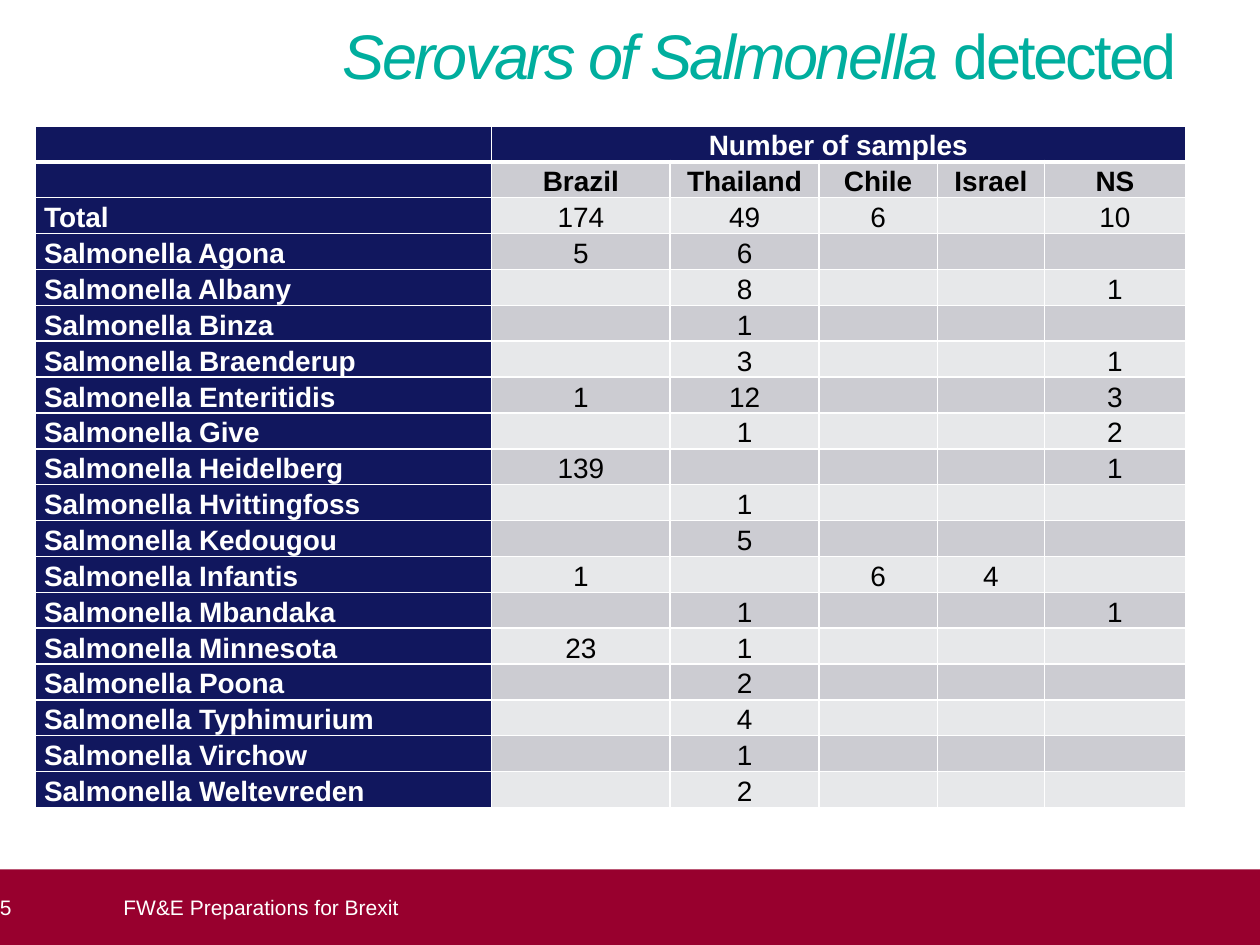
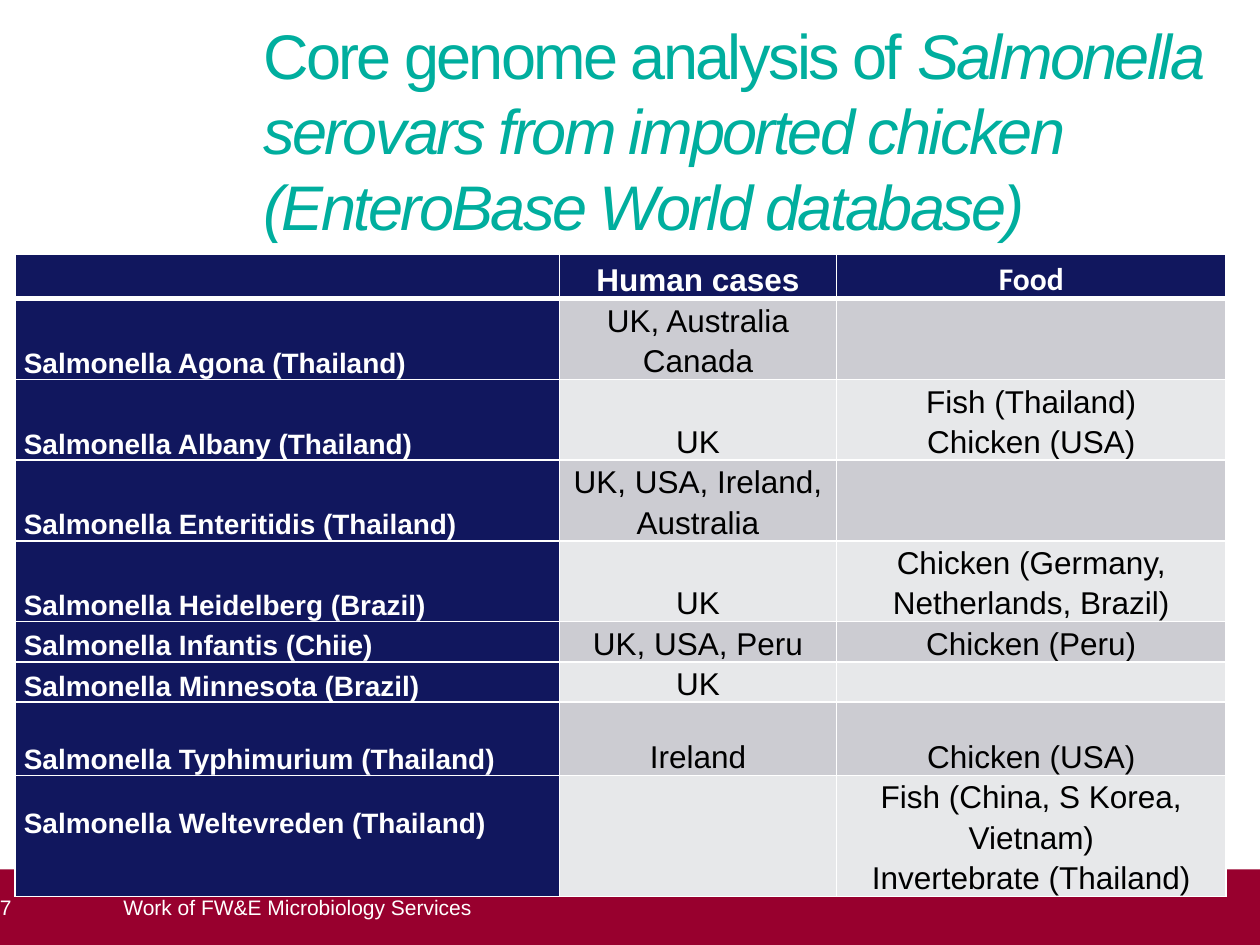
from lxml.etree import SubElement
from pptx import Presentation
from pptx.dml.color import RGBColor
from pptx.enum.shapes import MSO_SHAPE
from pptx.enum.text import MSO_ANCHOR, PP_ALIGN
from pptx.oxml.ns import qn
from pptx.util import Inches, Pt

TEAL = RGBColor(0x00, 0xAE, 0x9E)
NAVY = RGBColor(0x11, 0x17, 0x5E)
WINE = RGBColor(0x98, 0x00, 0x2E)
DARK = RGBColor(0xCC, 0xCC, 0xD2)
PALE = RGBColor(0xE7, 0xE8, 0xEA)
WHITE = RGBColor(0xFF, 0xFF, 0xFF)
BLACK = RGBColor(0x00, 0x00, 0x00)

COUNTS = [
    ("Agona", "5", "6", "", "", ""),
    ("Albany", "", "8", "", "", "1"),
    ("Binza", "", "1", "", "", ""),
    ("Braenderup", "", "3", "", "", "1"),
    ("Enteritidis", "1", "12", "", "", "3"),
    ("Give", "", "1", "", "", "2"),
    ("Heidelberg", "139", "", "", "", "1"),
    ("Hvittingfoss", "", "1", "", "", ""),
    ("Kedougou", "", "5", "", "", ""),
    ("Infantis", "1", "", "6", "4", ""),
    ("Mbandaka", "", "1", "", "", "1"),
    ("Minnesota", "23", "1", "", "", ""),
    ("Poona", "", "2", "", "", ""),
    ("Typhimurium", "", "4", "", "", ""),
    ("Virchow", "", "1", "", "", ""),
    ("Weltevreden", "", "2", "", "", ""),
]
MATCHES = [
    ("Agona (Thailand)", "UK, Australia Canada", ""),
    ("Albany (Thailand)", "UK", "Fish (Thailand)\nChicken (USA)"),
    ("Enteritidis (Thailand)", "UK, USA, Ireland, Australia", ""),
    ("Heidelberg (Brazil)", "UK", "Chicken (Germany, Netherlands, Brazil)"),
    ("Infantis (Chiie)", "UK, USA, Peru", "Chicken (Peru)"),
    ("Minnesota (Brazil)", "UK", ""),
    ("Typhimurium (Thailand)", "Ireland", "Chicken (USA)"),
    ("Weltevreden (Thailand)", "",
     "Fish (China, S Korea, Vietnam)\nInvertebrate (Thailand)"),
]


def write(frame, text, size=12, color=WHITE, bold=False, italic=False,
          font="Arial", align=PP_ALIGN.LEFT, space=1.0, track=0, more=False):
    for i, line in enumerate(text.split("\n")):
        para = frame.paragraphs[-1] if more or i == 0 else frame.add_paragraph()
        para.alignment = align
        para.line_spacing = space
        if not line:
            SubElement(para._p, qn("a:endParaRPr"), sz="1000")
            continue
        run = para.add_run()
        run.text = line
        run.font.name = font
        run.font.size = Pt(size)
        run.font.bold = bold
        run.font.italic = italic
        run.font.color.rgb = color
        if track:
            run._r.get_or_add_rPr().set("spc", str(track))


def edge(cell, side, width):
    line = SubElement(cell._tc.get_or_add_tcPr(), qn("a:ln" + side),
                      w=str(Pt(width)))
    fill = SubElement(line, qn("a:solidFill"))
    SubElement(fill, qn("a:srgbClr"), val=str(WHITE))


class Deck:
    def __init__(self):
        self.prs = Presentation()
        self.prs.slide_width = Inches(10)
        self.prs.slide_height = Inches(7.5)
        self.slide = None

    def start(self):
        self.slide = self.prs.slides.add_slide(self.prs.slide_layouts[6])

    def frame(self, shape, anchor, right=0):
        frame = shape.text_frame
        frame.word_wrap = True
        frame.vertical_anchor = anchor
        frame.margin_left = frame.margin_top = frame.margin_bottom = 0
        frame.margin_right = Inches(right)
        return frame

    def box(self, left, top, width, height, anchor):
        shape = self.slide.shapes.add_textbox(
            Inches(left), Inches(top), Inches(width), Inches(height))
        return self.frame(shape, anchor)

    def title(self, left, width, height, *parts):
        frame = self.box(left, 0.13, width, height, MSO_ANCHOR.TOP)
        for text, italic in parts:
            write(frame, text, size=36, color=TEAL, italic=italic,
                  track=-150, more=True)

    def foot(self, number, text):
        band = self.slide.shapes.add_shape(
            MSO_SHAPE.RECTANGLE, 0, Inches(6.9), Inches(10), Inches(0.6))
        band.shadow.inherit = False
        band.fill.solid()
        band.fill.fore_color.rgb = WINE
        band.line.fill.background()
        write(self.frame(band, MSO_ANCHOR.MIDDLE, 0.1), number)
        write(self.box(0.98, 6.9, 8.43, 0.6, MSO_ANCHOR.MIDDLE), text)

    def cell(self, cell, text, fill, size, low=1, **style):
        for side in "LRT":
            edge(cell, side, 1)
        edge(cell, "B", low)
        cell.fill.solid()
        cell.fill.fore_color.rgb = fill
        cell.vertical_anchor = MSO_ANCHOR.BOTTOM
        cell.margin_left = cell.margin_right = Inches(0.07)
        cell.margin_top = cell.margin_bottom = 0
        write(cell.text_frame, text, size=size, space=Pt(size * 1.28), **style)

    def table(self, left, top, cols, highs, rows, size, subs=0, fonts=()):
        table = self.slide.shapes.add_table(
            len(rows), len(cols), Inches(left), Inches(top),
            Inches(sum(cols)), Inches(sum(highs))).table
        for col, width in zip(table.columns, cols):
            col.width = Inches(width)
        for row, high in zip(table.rows, highs):
            row.height = Inches(high)
        for r, row in enumerate(rows):
            for c, text in enumerate(row):
                head = r == 0
                label = c == 0
                navy = head or label
                self.cell(
                    table.cell(r, c), text,
                    NAVY if navy else DARK if r % 2 else PALE,
                    16 if label else size,
                    low=3 if head else 1,
                    color=WHITE if navy else BLACK,
                    bold=navy or r <= subs,
                    font=fonts[c] if head and fonts else "Arial",
                    align=PP_ALIGN.LEFT if label else PP_ALIGN.CENTER)
        return table


def name(rows):
    return [("Salmonella " + row[0], *row[1:]) for row in rows]


def main():
    deck = Deck()

    deck.start()
    deck.title(2.72, 6.93, 0.71,
               ("Serovars of Salmonella", True), (" detected", False))
    rows = [("", "Number of samples", "", "", "", ""),
            ("", "Brazil", "Thailand", "Chile", "Israel", "NS"),
            ("Total", "174", "49", "6", "", "10"), *name(COUNTS)]
    table = deck.table(0.28, 1, [3.62, 1.42, 1.18, 0.94, 0.85, 1.12],
                       [0.28] * len(rows), rows, 16, subs=1)
    table.cell(0, 1).merge(table.cell(0, 5))
    deck.foot("5", "FW&E Preparations for Brexit")

    deck.start()
    deck.title(2.09, 7.64, 1.26, ("Core genome analysis of ", False),
               ("Salmonella serovars from imported chicken "
                "(EnteroBase World database)", True))
    deck.foot("7", "Work of FW&E Microbiology Services")
    highs = [0.35] + [0.64] * 4 + [0.32] * 2 + [0.58, 0.96]
    table = deck.table(0.12, 2.02, [4.32, 2.2, 3.09], highs,
                       [("", "Human cases", "Food"), *name(MATCHES)], 18,
                       fonts=("Arial", "Arial", "Calibri"))
    table.cell(8, 0).margin_bottom = Inches(0.45)

    deck.prs.save("out.pptx")


if __name__ == "__main__":
    main()
